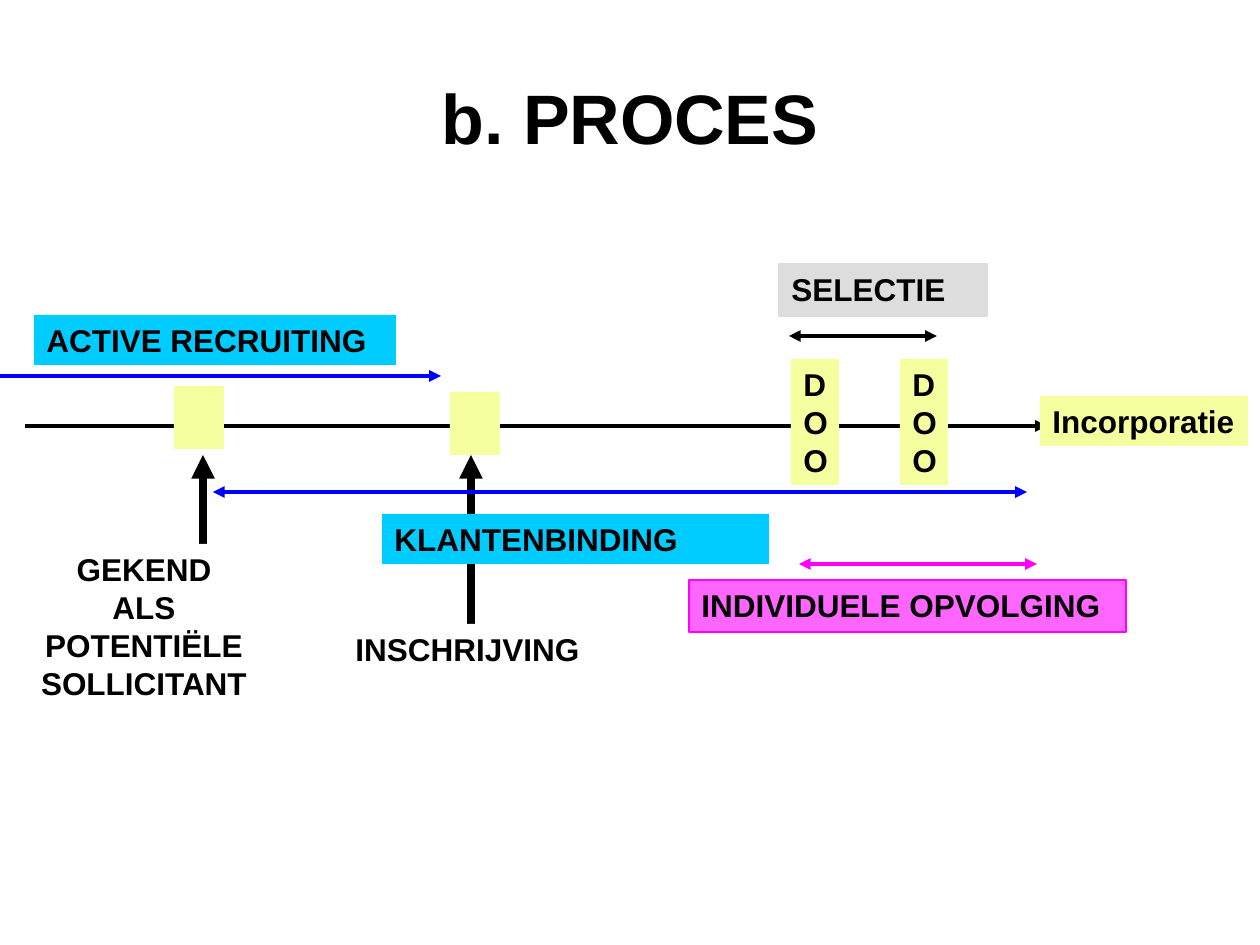
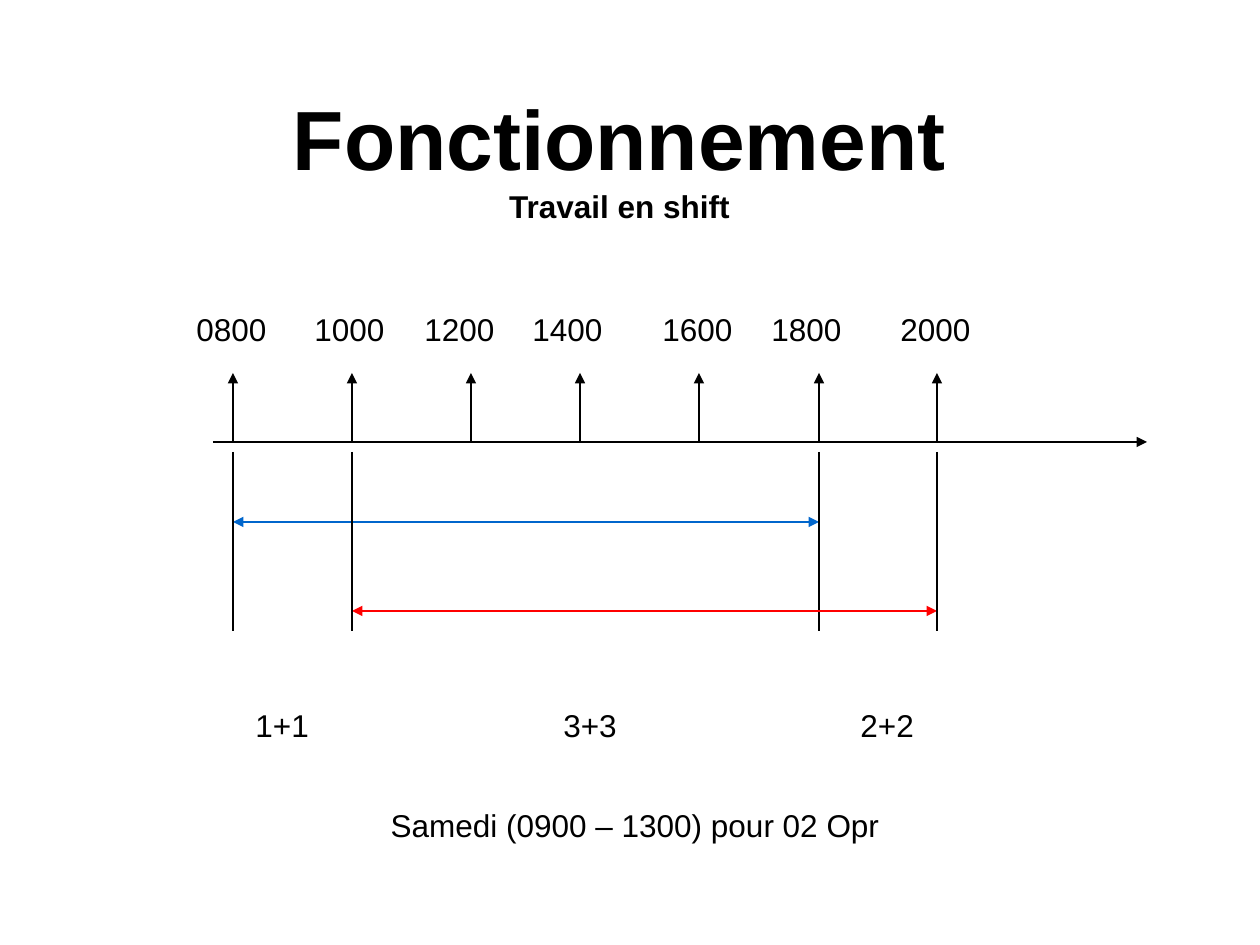
from lxml.etree import SubElement
from pptx import Presentation
from pptx.dml.color import RGBColor
from pptx.enum.shapes import MSO_CONNECTOR as Connector, MSO_SHAPE as Shape
from pptx.enum.text import MSO_ANCHOR as Anchor, MSO_AUTO_SIZE as AutoSize, PP_ALIGN as Align
from pptx.oxml.ns import qn
from pptx.util import Pt

EMU_PER_PX = 914400 / 126
FONT = "Arial"
BODY_SIZE = 18
COLORS = {
    "black": "000000", "white": "FFFFFF", "yellow": "F6FF9F", "cyan": "00CCFF",
    "blue": "0000FF", "gray": "DDDDDD", "pink": "FF66FF", "magenta": "FF00FF",
    "early": "0066CC", "late": "FF0000",
}

# Process slide: boxes are (text, left, top, width, height, fill, outline)
PROCESS_TITLE = [("b. PROCES", 40)]
PROCESS_TITLE_AREA = (63, 38, 1134, 158)
TIMELINE = (25, 426, 1047, 426)
MILESTONES = [
    ("DOO", 791, 359, 48, 126, "yellow", None),
    ("DOO", 900, 359, 48, 126, "yellow", None),
    ("Incorporatie", 1040, 396, 208, 50, "yellow", None),
    ("", 174, 386, 50, 63, "yellow", None),
    ("", 450, 392, 50, 63, "yellow", None),
]
EVENTS = [
    (("GEKEND\nALS POTENTIËLE SOLLICITANT", 25, 544, 238, 164, "white", None), 203),
    (("INSCHRIJVING", 334, 624, 267, 50, "white", None), 471),
]
EVENT_ARROW_TOP = 455
# Each phase: box, arrow (left, right, y), arrow colour, arrowhead at both ends
PHASES = [
    (("ACTIVE RECRUITING", 34, 315, 362, 50, "cyan", None), (0, 441, 376), "blue", False),
    (("SELECTIE", 779, 264, 208, 52, "gray", "gray"), (789, 937, 336), "black", True),
    (("KLANTENBINDING", 382, 514, 387, 50, "cyan", None), (213, 1027, 492), "blue", True),
    (("INDIVIDUELE OPVOLGING", 689, 580, 437, 52, "pink", "magenta"),
     (799, 1037, 564), "magenta", True),
]

# Shift slide
SHIFT_TITLE = [("Fonctionnement", 48), ("Travail en shift", BODY_SIZE)]
SHIFT_TITLE_AREA = (203, 86, 833, 139)
HOURS = {  # hour: (tick x, label left)
    "0800": (233, 184), "1000": (352, 302), "1200": (471, 412), "1400": (580, 520),
    "1600": (699, 650), "1800": (819, 759), "2000": (937, 888),
}
DAY_AXIS = (213, 442, 1147, 442)
TICK_TOP, HOUR_LABEL_TOP = 373, 304
GUIDE_TOP, GUIDE_BOTTOM = 452, 631
SHIFTS = [("0800", "1800", 522, "early"), ("1000", "2000", 611, "late")]
STAFFING = [("1+1", 243), ("3+3", 551), ("2+2", 848)]
STAFFING_TOP = 700
SATURDAY = "Samedi (0900 – 1300) pour 02 Opr"


def px(*lengths):
    return [round(length * EMU_PER_PX) for length in lengths]


def rgb(name):
    return RGBColor.from_string(COLORS[name])


def write(frame, lines, bold=False, align=Align.LEFT, anchor=Anchor.TOP, wrap=True):
    """Fill one paragraph with (text, size) lines parted by line breaks."""
    frame.auto_size = AutoSize.NONE
    frame.word_wrap = wrap
    frame.vertical_anchor = anchor
    para = frame.paragraphs[0]
    para.alignment = align
    for index, (text, size) in enumerate(lines):
        if index:
            para.add_line_break()
        span = para.add_run()
        span.text = text
        span.font.name = FONT
        span.font.size = Pt(size)
        span.font.bold = bold
        span.font.color.rgb = rgb("black")


def add_titled_page(deck, lines, area):
    page = deck.slides.add_slide(deck.slide_layouts[5])
    title = page.shapes.title
    title.left, title.top, title.width, title.height = px(*area)
    write(title.text_frame, lines, True, Align.CENTER, Anchor.MIDDLE)
    return page


def add_line(page, ends, color="black", width=0.75, head=False, tail=True):
    line = page.shapes.add_connector(Connector.STRAIGHT, *px(*ends))
    line.line.color.rgb = rgb(color)
    line.line.width = Pt(width)
    outline = line.line._get_or_add_ln()
    for tag, wanted in (("a:headEnd", head), ("a:tailEnd", tail)):
        if wanted:
            SubElement(outline, qn(tag), type="triangle")
    SubElement(line._element.spPr, qn("a:effectLst"))


def add_box(page, box, align=Align.LEFT):
    text, left, top, width, height, fill, outline = box
    shape = page.shapes.add_shape(Shape.RECTANGLE, *px(left, top, width, height))
    shape.shadow.inherit = False
    shape.fill.solid()
    shape.fill.fore_color.rgb = rgb(fill)
    if outline:
        shape.line.color.rgb = rgb(outline)
        shape.line.width = Pt(0.75)
    else:
        shape.line.fill.background()
    if text:
        lines = [(line, BODY_SIZE) for line in text.split("\n")]
        write(shape.text_frame, lines, True, align)


def add_label(page, text, area, align=Align.LEFT, wrap=False):
    label = page.shapes.add_textbox(*px(*area))
    write(label.text_frame, [(text, BODY_SIZE)], align=align, wrap=wrap)


def build_process(deck):
    page = add_titled_page(deck, PROCESS_TITLE, PROCESS_TITLE_AREA)
    add_line(page, TIMELINE, width=2.25)
    for box in MILESTONES:
        add_box(page, box)
    for box, x in EVENTS:
        add_line(page, (x, box[2], x, EVENT_ARROW_TOP), width=4.5)
        add_box(page, box, Align.CENTER)
    for box, (left, right, y), color, both_ends in PHASES:
        add_box(page, box)
        add_line(page, (left, y, right, y), color, 2.25, head=both_ends)


def build_shifts(deck):
    page = add_titled_page(deck, SHIFT_TITLE, SHIFT_TITLE_AREA)
    add_line(page, DAY_AXIS)
    for hour, (x, label_left) in HOURS.items():
        add_line(page, (x, DAY_AXIS[1], x, TICK_TOP))
        add_label(page, hour, (label_left, HOUR_LABEL_TOP, 96, 50))
    for start, end, y, color in SHIFTS:
        left, right = HOURS[start][0], HOURS[end][0]
        add_line(page, (left, y, right, y), color, head=True)
        for x in (left, right):
            add_line(page, (x, GUIDE_TOP, x, GUIDE_BOTTOM), tail=False)
    for text, left in STAFFING:
        add_label(page, text, (left, STAFFING_TOP, 78, 50))
    add_label(page, SATURDAY, (342, 800, 586, 107), Align.CENTER, wrap=True)


def main():
    deck = Presentation()
    deck.slide_width, deck.slide_height = px(1260, 945)
    build_process(deck)
    build_shifts(deck)
    deck.save("out.pptx")


if __name__ == "__main__":
    main()
